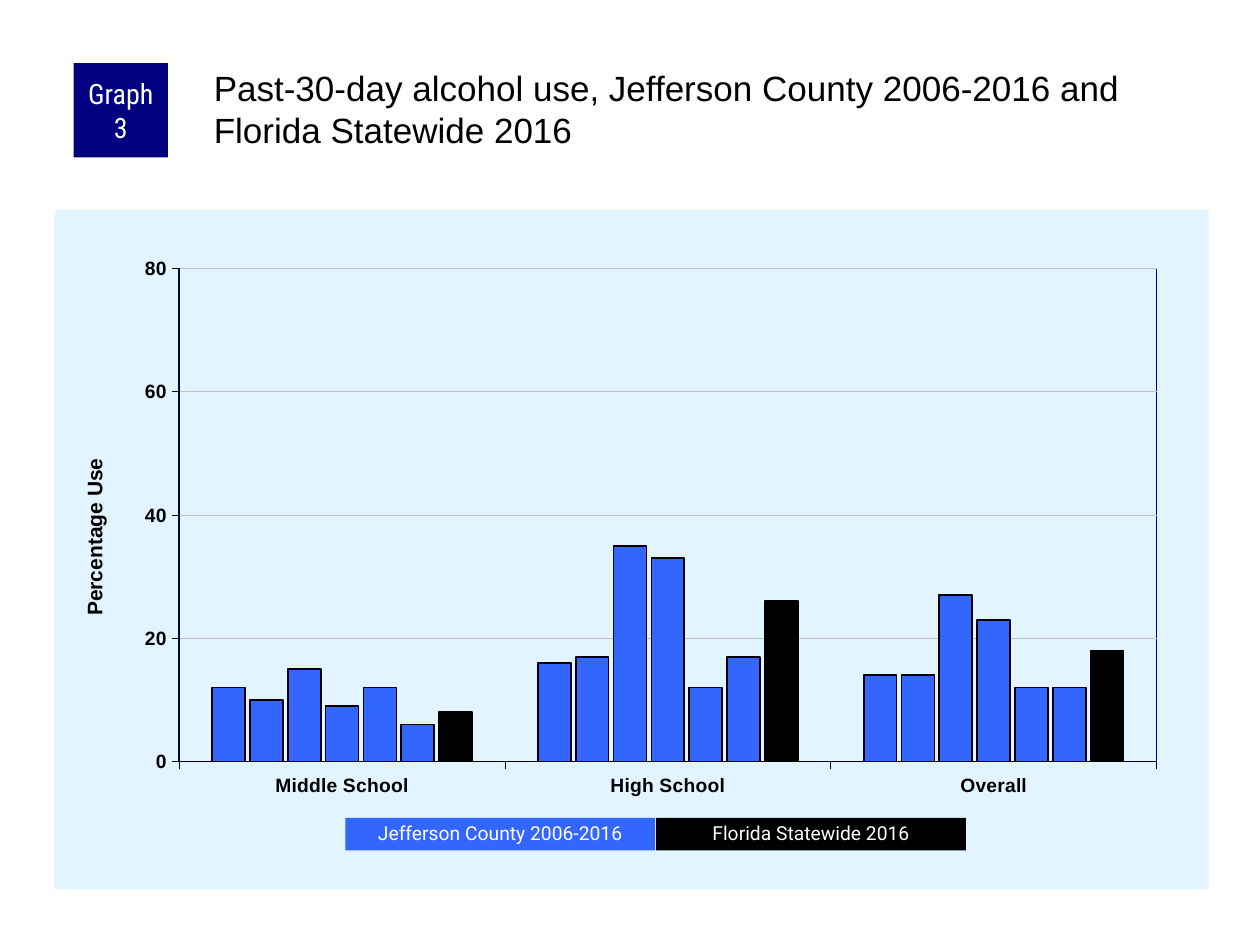
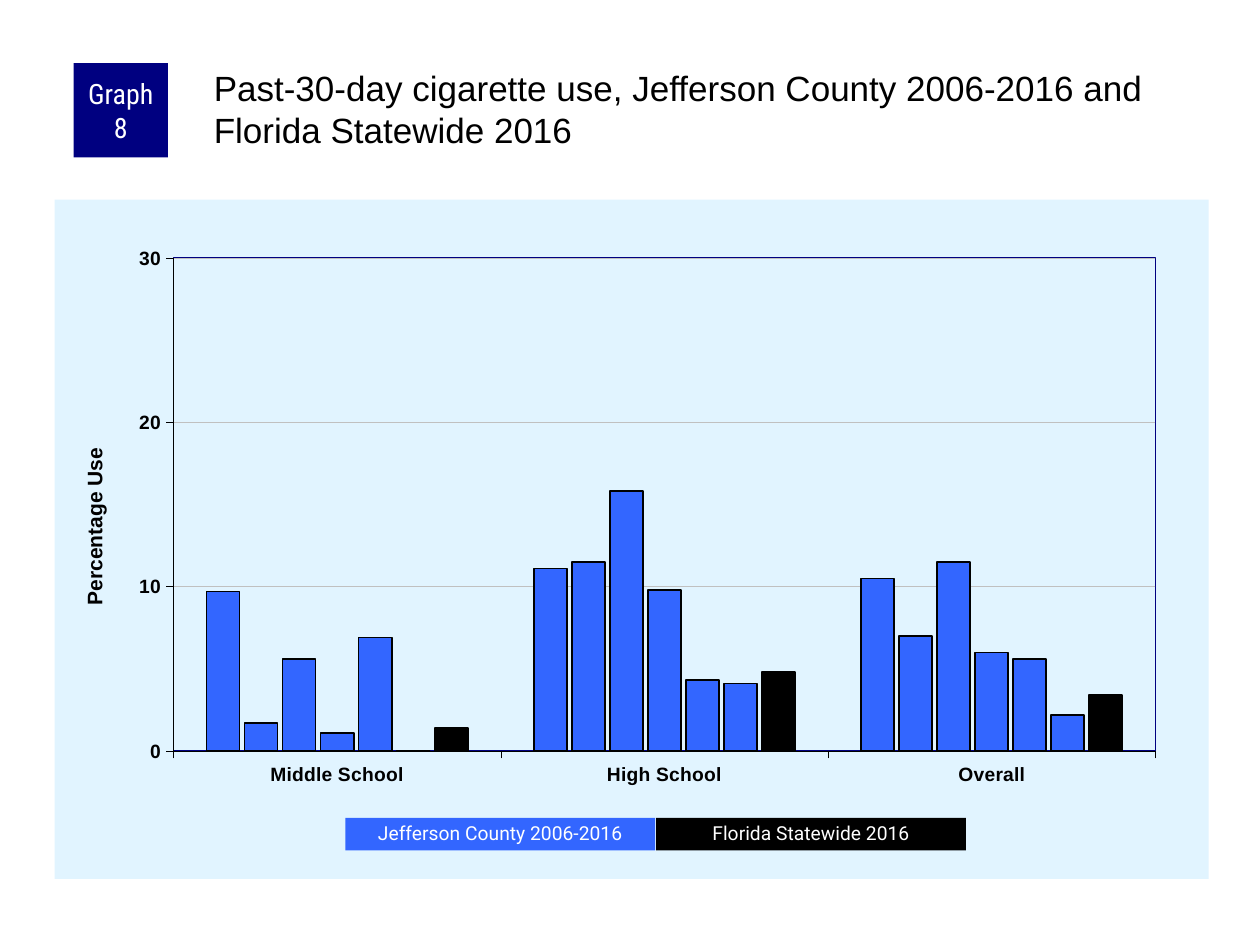
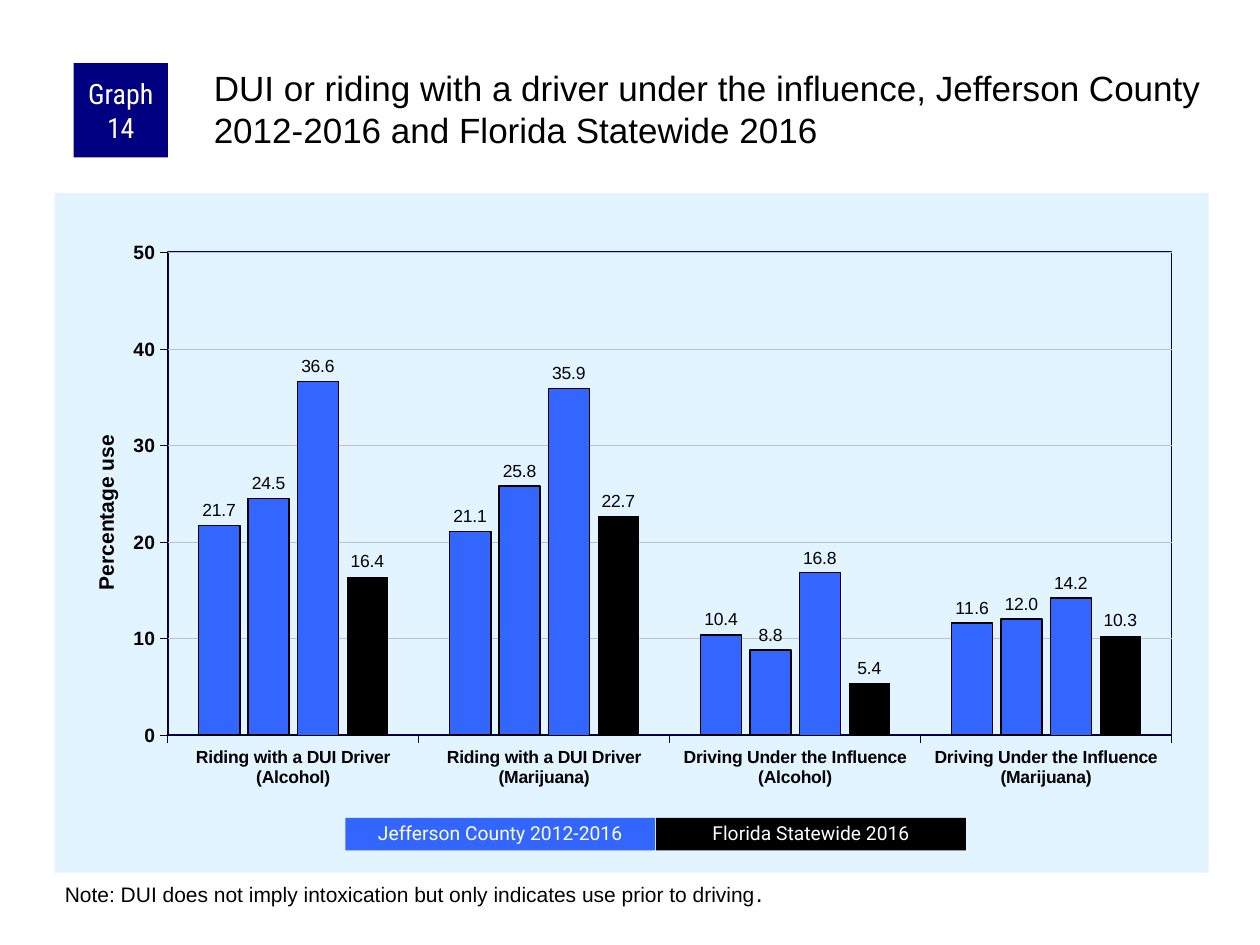
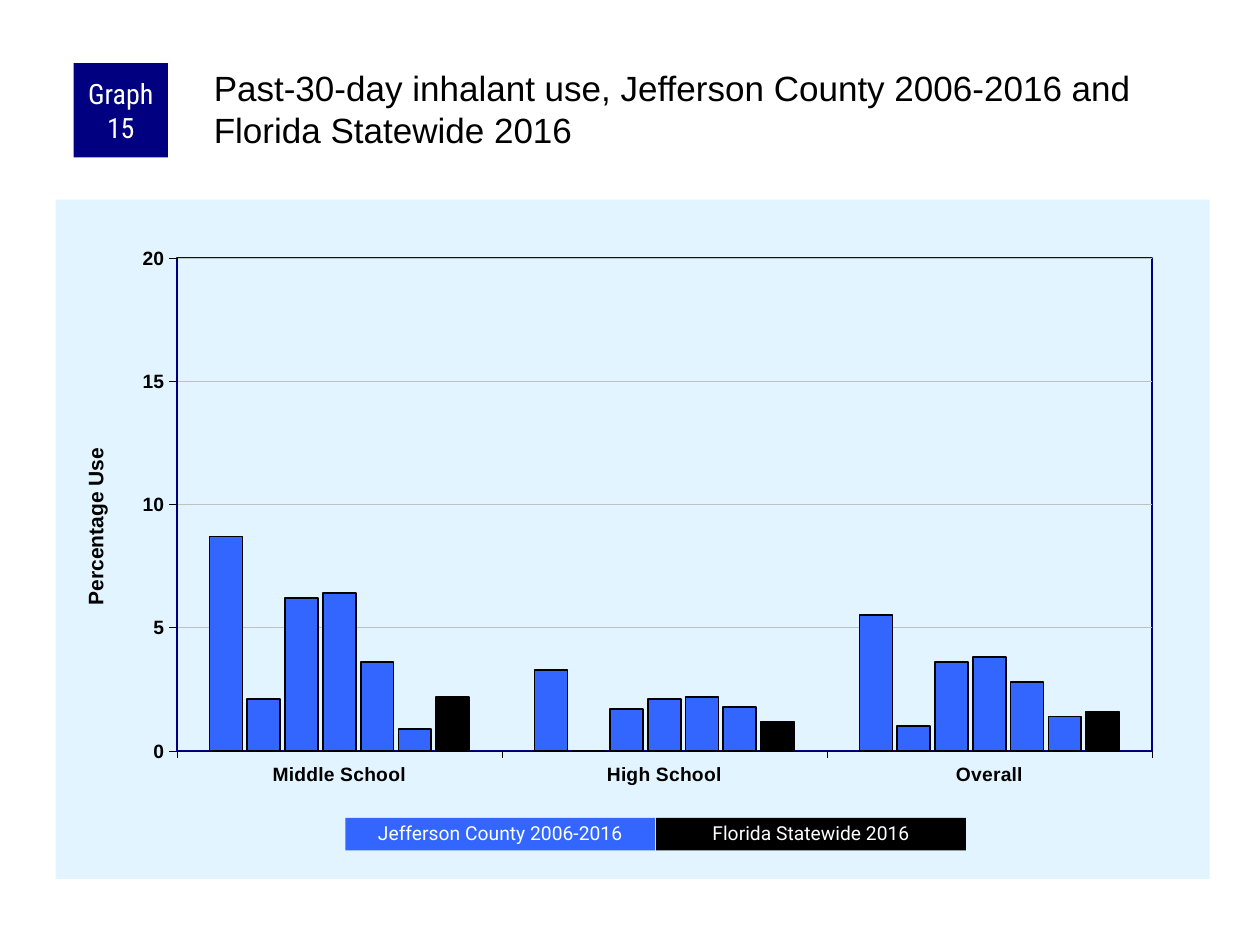
from lxml.etree import fromstring
from pptx import Presentation
from pptx.chart.data import CategoryChartData
from pptx.dml.color import RGBColor
from pptx.enum.chart import XL_CHART_TYPE, XL_LABEL_POSITION, XL_TICK_MARK
from pptx.enum.shapes import MSO_SHAPE
from pptx.enum.text import MSO_ANCHOR, PP_ALIGN
from pptx.oxml.ns import nsdecls, qn
from pptx.util import Inches, Pt

WIDTH, HEIGHT = Inches(10), Inches(7.5)
COLS, ROWS = 120, 90
NAVY, BLUE, PALE = "000080", "3366FF", "E1F4FF"
BLACK, WHITE, GRAY = "000000", "FFFFFF", "C0C0C0"
STATE = "Florida Statewide 2016"
SCHOOLS = ["Middle School", "High School", "Overall"]
DRIVING = [f"{act} ({drug})"
           for act in ("Riding with a DUI Driver", "Driving Under the Influence")
           for drug in ("Alcohol", "Marijuana")]
ALCOHOL = [(12, 16, 14), (10, 17, 14), (15, 35, 27), (9, 33, 23),
           (12, 12, 12), (6, 17, 12), (8, 26, 18)]
SMOKING = [(9.7, 11.1, 10.5), (1.7, 11.5, 7), (5.6, 15.8, 11.5),
           (1.1, 9.8, 6), (6.9, 4.3, 5.6), (0, 4.1, 2.2), (1.4, 4.8, 3.4)]
DUI = [(21.7, 21.1, 10.4, 11.6), (24.5, 25.8, 8.8, 12),
       (36.6, 35.9, 16.8, 14.2), (16.4, 22.7, 5.4, 10.3)]
INHALANT = [(8.7, 3.3, 5.5), (2.1, 0, 1), (6.2, 1.7, 3.6), (6.4, 2.1, 3.8),
            (3.6, 2.2, 2.8), (0.9, 1.8, 1.4), (2.2, 1.2, 1.6)]


def color(code):
    return RGBColor.from_string(code)


def spot(col, row, wide, high):
    return (int(WIDTH * col / COLS), int(HEIGHT * row / ROWS),
            int(WIDTH * wide / COLS), int(HEIGHT * high / ROWS))


def style(font, size, face="Arial", code=BLACK, bold=False):
    font.size, font.name, font.bold = Pt(size), face, bold
    font.color.rgb = color(code)


def stroke(line, code, width):
    line.color.rgb = color(code)
    line.width = Pt(width)


def inset(frame, left, top, right, bottom):
    frame.margin_left, frame.margin_top = Inches(left), Inches(top)
    frame.margin_right, frame.margin_bottom = Inches(right), Inches(bottom)


def add_box(slide, place, text, fill, size, face):
    box = slide.shapes.add_shape(MSO_SHAPE.RECTANGLE, *spot(*place))
    box.shadow.inherit = False
    box.fill.solid()
    box.fill.fore_color.rgb = color(fill)
    box.line.fill.background()
    frame = box.text_frame
    frame.text = text
    frame.word_wrap = True
    frame.vertical_anchor = MSO_ANCHOR.MIDDLE
    para = frame.paragraphs[0]
    para.alignment = PP_ALIGN.CENTER
    style(para.font, size, face, WHITE)
    return frame


def add_title(slide, text):
    title = slide.shapes.title
    title.left, title.top, title.width, title.height = spot(20, 6, 95, 10)
    frame = title.text_frame
    frame.text = text
    frame.vertical_anchor = MSO_ANCHOR.TOP
    inset(frame, 0.03, 0.03, 0, 0)
    para = frame.paragraphs[0]
    para.alignment = PP_ALIGN.LEFT
    style(para.font, 20)


def add_head(slide, number, text):
    add_title(slide, text)
    frame = add_box(slide, (7, 6, 9, 9), f"Graph {number}", NAVY, 16,
                    "Roboto Condensed")
    inset(frame, 0.05, 0, 0.05, 0)


def add_key(slide, years):
    keys = [(f"Jefferson County {years}", BLUE), (STATE, BLACK)]
    for step, (text, fill) in enumerate(keys):
        frame = add_box(slide, (32.9 + 29.6 * step, 77.9, 29.5, 3.1), text,
                        fill, 11, "Roboto")
        frame.paragraphs[0].line_spacing = 0.9


def add_note(slide, text):
    frame = slide.shapes.add_textbox(*spot(5, 83, 110, 4)).text_frame
    frame.word_wrap = True
    para = frame.paragraphs[0]
    style(para.font, 12)
    para.add_run().text = text
    stop = para.add_run()
    stop.text = "."
    stop.font.size = Pt(14)


def set_layout(node, index, **shares):
    for old in node.findall(qn("c:layout")):
        node.remove(old)
    target = '<c:layoutTarget val="inner"/>' if "w" in shares else ""
    modes = "".join(f'<c:{key}Mode val="edge"/>' for key in "xy")
    sizes = "".join(f'<c:{key} val="{share}"/>' for key, share in shares.items())
    node.insert(index, fromstring(
        f'<c:layout {nsdecls("c")}><c:manualLayout>{target}{modes}{sizes}'
        '</c:manualLayout></c:layout>'))


def make_look(fill, line):
    return fromstring(f'<c:spPr {nsdecls("c", "a")}>{fill}{line}</c:spPr>')


def paint(code):
    return f'<a:solidFill><a:srgbClr val="{code}"/></a:solidFill>'


def set_axis(axis, size):
    axis.major_tick_mark = XL_TICK_MARK.OUTSIDE
    axis.minor_tick_mark = XL_TICK_MARK.NONE
    style(axis.tick_labels.font, size, bold=True)
    stroke(axis.format.line, BLACK, 0.25)


def set_scale(axis, top, unit, name, place):
    set_axis(axis, 11)
    axis.minimum_scale, axis.maximum_scale, axis.major_unit = 0, top, unit
    axis.has_major_gridlines = True
    stroke(axis.major_gridlines.format.line, GRAY, 0.25)
    axis.tick_labels.number_format = "0"
    axis.tick_labels.number_format_is_linked = False
    title = axis.axis_title
    title.text_frame.text = name
    style(title.text_frame.paragraphs[0].font, 12, bold=True)
    set_layout(title._element, 1, x=place[0], y=place[1])


def add_labels(row):
    labels = row.data_labels
    labels.show_value = True
    labels.number_format = "0.0"
    labels.number_format_is_linked = False
    labels.position = XL_LABEL_POSITION.OUTSIDE_END
    style(labels.font, 10)


def add_graph(slide, place, cats, rows, top, unit, plot, name="Percentage Use",
              mark=(0.02, 0.36), gap=200, lap=-15, small=11, labels=False):
    data = CategoryChartData()
    data.categories = cats
    for count, row in enumerate(rows, 1):
        data.add_series(f"Series {count}", row)
    chart = slide.shapes.add_chart(XL_CHART_TYPE.COLUMN_CLUSTERED,
                                   *spot(*place, 109.9, 64.7), data).chart
    style(chart.font, 8)
    chart.has_legend = chart.has_title = False
    set_axis(chart.category_axis, small)
    set_scale(chart.value_axis, top, unit, name, mark)
    bars = chart.plots[0]
    bars.gap_width, bars.overlap, bars.vary_by_categories = gap, lap, False
    for row in bars.series:
        last = row.name == f"Series {len(rows)}"
        row.format.fill.solid()
        row.format.fill.fore_color.rgb = color(BLACK if last else BLUE)
        stroke(row.format.line, BLACK, 1)
        if labels:
            add_labels(row)
    body = chart._chartSpace.chart
    body.addnext(make_look(paint(PALE), "<a:ln><a:noFill/></a:ln>"))
    area = body.plotArea
    set_layout(area, 0, **dict(zip("xywh", plot)))
    area.append(make_look("<a:noFill/>",
                          f'<a:ln w="{Pt(1)}">{paint(NAVY)}</a:ln>'))
    return chart


def add_page(deck, number, topic, years="2006-2016"):
    slide = deck.slides.add_slide(deck.slide_layouts[5])
    add_head(slide, number, f"{topic}, Jefferson County {years} and {STATE}")
    return slide


def add_use(deck, number, drug, place, rows, top, unit, plot):
    slide = add_page(deck, number, f"Past-30-day {drug} use")
    add_graph(slide, place, SCHOOLS, rows, top, unit, plot)
    add_key(slide, "2006-2016")


def add_dui(deck):
    years = "2012-2016"
    slide = add_page(deck, 14, "DUI or riding with a driver under the influence",
                     years)
    chart = add_graph(slide, (5.2, 18.4), DRIVING, DUI, 50, 10,
                      (0.098, 0.087, 0.87, 0.711), "Percentage use",
                      (0.03, 0.35), 150, -20, 10, True)
    third, state = list(chart.plots[0].series)[2:]
    third.format.line.width = Pt(0.75)
    state.format.line.fill.background()
    add_note(slide, "Note: DUI does not imply intoxication but only indicates "
                    "use prior to driving")
    add_key(slide, years)


def main():
    deck = Presentation()
    deck.slide_width, deck.slide_height = WIDTH, HEIGHT
    add_use(deck, 3, "alcohol", (5.2, 20), ALCOHOL, 80, 20,
            (0.108, 0.086, 0.847, 0.726))
    add_use(deck, 8, "cigarette", (5.2, 19), SMOKING, 30, 10,
            (0.103, 0.086, 0.851, 0.726))
    add_dui(deck)
    add_use(deck, 15, "inhalant", (5.3, 19), INHALANT, 20, 5,
            (0.105, 0.086, 0.845, 0.726))
    deck.save("out.pptx")


if __name__ == "__main__":
    main()
